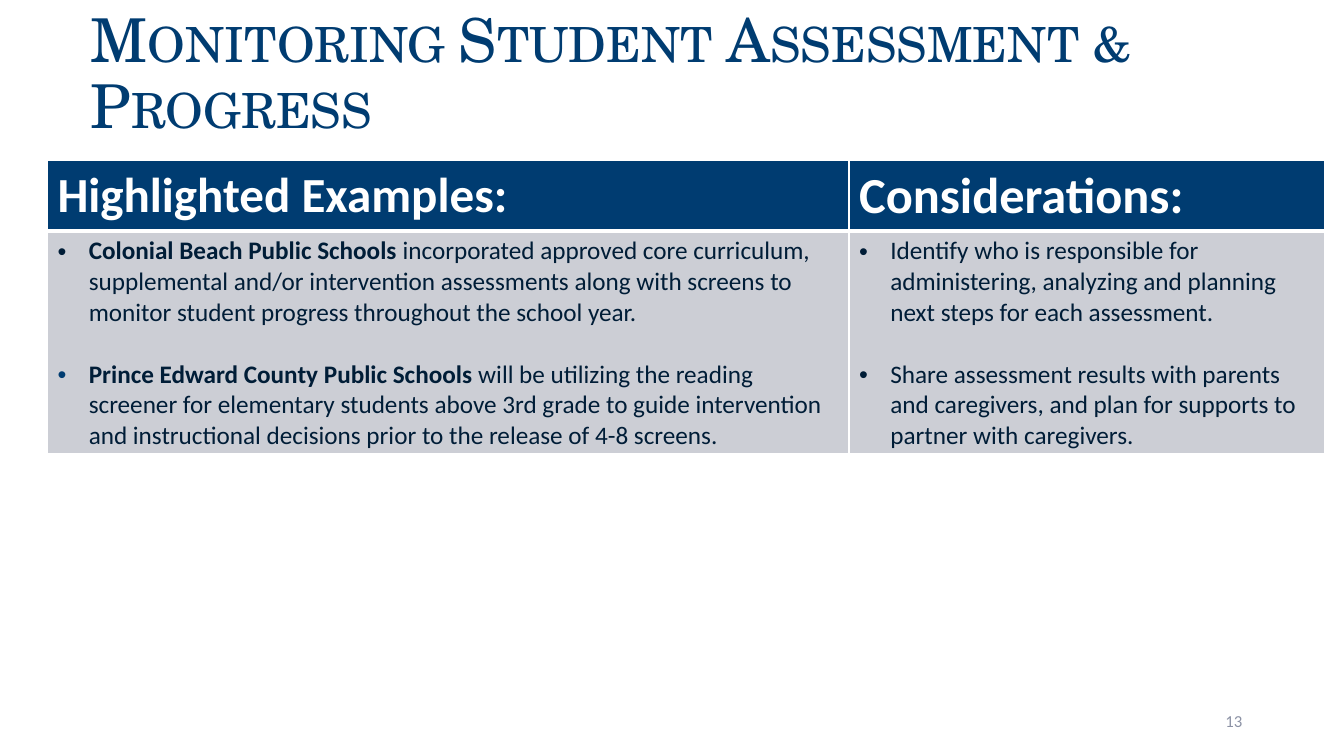
"""Build the slide on monitoring student assessment and progress."""
from dataclasses import dataclass

import pptx
import pptx.dml.color
import pptx.enum.text
import pptx.oxml
import pptx.oxml.ns
import pptx.util

Pt = pptx.util.Pt
Inches = pptx.util.Inches
ALIGN = pptx.enum.text.PP_ALIGN
ANCHOR = pptx.enum.text.MSO_ANCHOR

WIDTH, HEIGHT = Inches(13.33), Inches(7.5)
COLORS = {"navy": "003C71", "ink": "001D37", "band": "CCCED5",
          "white": "FFFFFF", "muted": "8C92A5"}
BODY_FONT, TITLE_FONT = "Calibri", "TeX Gyre Schola"
HEADER_ROW, BODY_ROW = 9.2, 29.47


@dataclass
class Bullet:
    text: str
    lead: str = ""
    color: str = "ink"


@dataclass
class Column:
    heading: str
    heading_size: int
    width: float
    bullets: list[Bullet]


COLUMNS = [
    Column("Highlighted Examples:", 35, 59.64, [
        Bullet("incorporated approved core curriculum, supplemental and/or "
               "intervention assessments along with screens to monitor student "
               "progress throughout the school year.",
               "Colonial Beach Public Schools "),
        Bullet(" will be utilizing the reading screener for elementary students "
               "above 3rd grade to guide intervention and instructional "
               "decisions prior to the release of 4-8 screens.",
               "Prince Edward County Public Schools", "navy"),
    ]),
    Column("Considerations:", 36, 35.41, [
        Bullet("Identify who is responsible for administering, analyzing and "
               "planning next steps for each assessment."),
        Bullet("Share assessment results with parents and caregivers, and plan "
               "for supports to partner with caregivers."),
    ]),
]


def across(percent: float) -> int:
    return round(WIDTH * percent / 100)


def down(percent: float) -> int:
    return round(HEIGHT * percent / 100)


def rgb(name: str) -> pptx.dml.color.RGBColor:
    return pptx.dml.color.RGBColor.from_string(COLORS[name])


def format_run(r, size: float, color: str, font: str = BODY_FONT, bold: bool = False) -> None:
    r.font.size, r.font.name, r.font.bold = Pt(size), font, bold
    r.font.color.rgb = rgb(color)


def add_text(s, box: tuple, text: str, anchor, size: float, color: str, font: str):
    x, y, w, h = box
    tf = s.shapes.add_textbox(across(x), down(y), across(w), down(h)).text_frame
    tf.word_wrap, tf.vertical_anchor = True, anchor
    tf.text = text
    format_run(tf.paragraphs[0].runs[0], size, color, font)
    return tf


def add_xml(parent, body: str) -> None:
    tag, rest = body.split(" ", 1)
    ns = pptx.oxml.ns.nsdecls("a")
    parent.append(pptx.oxml.parse_xml(f"<a:{tag} {ns} {rest}"))


def style_cell(cell, fill: str, top: float, bottom: float) -> None:
    tc_pr = cell._tc.get_or_add_tcPr()
    for side, weight in zip("LRTB", (1, 1, top, bottom)):
        add_xml(tc_pr, f'ln{side} w="{Pt(weight)}"><a:solidFill><a:srgbClr '
                       f'val="{COLORS["white"]}"/></a:solidFill></a:ln{side}>')
    cell.fill.solid()
    cell.fill.fore_color.rgb = rgb(fill)


def fill_bullets(tf, bullets: list[Bullet]) -> None:
    for i, bullet in enumerate(bullets):
        p = tf.paragraphs[0] if i == 0 else tf.add_paragraph()
        p.space_before = Pt(22 if i else 0)
        p_pr = p._p.get_or_add_pPr()
        p_pr.set("marL", str(Inches(0.31)))
        p_pr.set("indent", str(-Inches(0.31)))
        add_xml(p_pr, f'buClr ><a:srgbClr val="{COLORS[bullet.color]}"/></a:buClr>')
        add_xml(p_pr, 'buFont typeface="Arial"/>')
        add_xml(p_pr, 'buChar char="•"/>')
        for text, bold in ((bullet.lead, True), (bullet.text, False)):
            if text:
                r = p.add_run()
                r.text = text
                format_run(r, 18, "ink", bold=bold)


def add_columns(s, columns: list[Column]) -> None:
    total = sum(column.width for column in columns)
    table = s.shapes.add_table(2, len(columns), across(3.53), down(21.2), across(total),
                               down(HEADER_ROW + BODY_ROW)).table
    table.first_row = table.horz_banding = False
    for row, height in zip(table.rows, (HEADER_ROW, BODY_ROW)):
        row.height = down(height)
    for i, column in enumerate(columns):
        table.columns[i].width = across(column.width)
        head, body = table.cell(0, i), table.cell(1, i)
        style_cell(head, "navy", 1, 3)
        style_cell(body, "band", 3, 1)
        head.text_frame.text = column.heading
        format_run(head.text_frame.paragraphs[0].runs[0], column.heading_size,
                   "white", bold=True)
        fill_bullets(body.text_frame, column.bullets)


def main() -> None:
    prs = pptx.Presentation()
    prs.slide_width, prs.slide_height = WIDTH, HEIGHT
    s = prs.slides.add_slide(prs.slide_layouts[6])
    title = add_text(s, (0, 0, 100, 19.33), "Monitoring Student Assessment & Progress",
                     ANCHOR.BOTTOM, 43.2, "navy", TITLE_FONT)
    title.margin_left = Inches(0.9)
    p = title.paragraphs[0]
    p.line_spacing = 0.9
    p.runs[0].font._element.set("cap", "small")
    add_columns(s, COLUMNS)
    number = add_text(s, (70.67, 92.67, 22.5, 5.33), "13",
                      ANCHOR.MIDDLE, 12, "muted", BODY_FONT)
    number.paragraphs[0].alignment = ALIGN.RIGHT
    prs.save("out.pptx")


if __name__ == "__main__":
    main()
